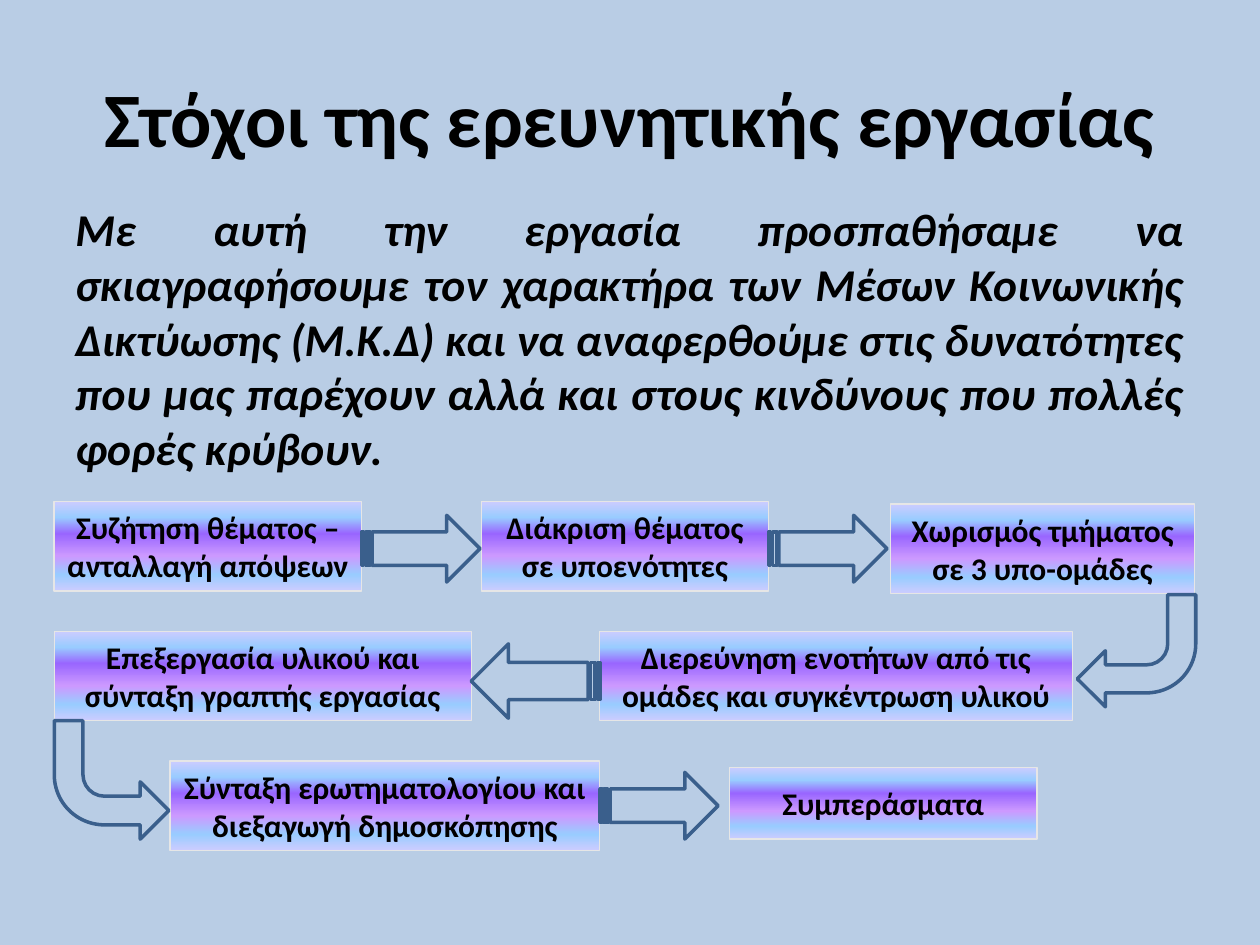
from lxml import etree
from pptx import Presentation
from pptx.dml.color import RGBColor
from pptx.enum.shapes import MSO_SHAPE
from pptx.enum.text import MSO_ANCHOR, PP_ALIGN
from pptx.oxml.ns import qn
from pptx.util import Inches, Pt

RECTANGLE = MSO_SHAPE.RECTANGLE
STRIPED = MSO_SHAPE.STRIPED_RIGHT_ARROW
BENT = MSO_SHAPE.BENT_ARROW
CENTER, JUSTIFY = PP_ALIGN.CENTER, PP_ALIGN.JUSTIFY
TOP, MIDDLE = MSO_ANCHOR.TOP, MSO_ANCHOR.MIDDLE

FONT = "Calibri"
COLORS = {"background": "B9CDE5", "text": "000000",
          "box_line": "E6E6E6", "arrow_line": "3A5F8C"}
# Gradient stops of the step boxes: percent, colour
GRADIENT = [(0, "CCCCFF"), (18, "99CCFF"), (36, "9966FF"),
            (61, "CC99FF"), (82, "99CCFF"), (100, "CCCCFF")]

TITLE = "Στόχοι της ερευνητικής εργασίας"
INTRO = ("Με αυτή την εργασία προσπαθήσαμε να σκιαγραφήσουμε τον χαρακτήρα "
         "των Μέσων Κοινωνικής Δικτύωσης (Μ.Κ.Δ) και να αναφερθούμε στις "
         "δυνατότητες που μας παρέχουν αλλά και στους κινδύνους που πολλές "
         "φορές κρύβουν.")
# Steps in order: text, (left, top, width, height)
STEPS = [
    ("Συζήτηση θέματος – ανταλλαγή απόψεων", (0.43, 3.98, 2.44, 0.71)),
    ("Διάκριση θέματος σε υποενότητες", (3.82, 3.98, 2.28, 0.71)),
    ("Χωρισμός τμήματος σε 3 υπο-ομάδες", (7.07, 4.0, 2.41, 0.71)),
    ("Διερεύνηση ενοτήτων από τις ομάδες και συγκέντρωση υλικού",
     (4.76, 5.01, 3.75, 0.71)),
    ("Επεξεργασία υλικού και σύνταξη γραπτής εργασίας",
     (0.43, 5.01, 3.31, 0.71)),
    ("Σύνταξη ερωτηματολογίου και διεξαγωγή δημοσκόπησης",
     (1.35, 6.04, 3.41, 0.71)),
    ("Συμπεράσματα", (5.79, 6.09, 2.44, 0.57)),
]
# Arrows between steps: kind, place, rotation, mirrored
ARROWS = [
    (STRIPED, (2.87, 4.09, 0.94, 0.53), 0, False),
    (STRIPED, (6.1, 4.09, 0.94, 0.53), 0, False),
    (BENT, (8.55, 4.72, 0.94, 0.89), 180, False),
    (STRIPED, (3.74, 5.11, 1.02, 0.59), 180, False),
    (BENT, (0.43, 5.72, 0.91, 0.94), 180, True),
    (STRIPED, (4.76, 6.13, 0.94, 0.53), 0, False),
]


def color(name):
    return RGBColor.from_string(COLORS[name])


def write(shape, text, size, align, anchor, italic=False):
    frame = shape.text_frame
    frame.word_wrap = True
    frame.vertical_anchor = anchor
    para = frame.paragraphs[0]
    para.alignment = align
    span = para.add_run()
    span.text = text
    font = span.font
    font.name, font.size = FONT, Pt(size)
    font.bold, font.italic = True, italic
    font.color.rgb = color("text")


def add_outlined(page, kind, place, line_color, line_width):
    shape = page.shapes.add_shape(kind, *map(Inches, place))
    shape.shadow.inherit = False
    shape.line.color.rgb = color(line_color)
    shape.line.width = Pt(line_width)
    return shape


def fill_gradient(shape):
    shape.fill.gradient()
    shape.fill.gradient_angle = 270
    stops = shape._element.spPr.find(qn("a:gradFill")).find(qn("a:gsLst"))
    for stop in list(stops):
        stops.remove(stop)
    for percent, value in GRADIENT:
        stop = etree.SubElement(stops, qn("a:gs"), pos=str(percent * 1000))
        etree.SubElement(stop, qn("a:srgbClr"), val=value)


def main():
    deck = Presentation()
    deck.slide_width, deck.slide_height = Inches(10), Inches(7.5)
    page = deck.slides.add_slide(deck.slide_layouts[5])
    page.background.fill.solid()
    page.background.fill.fore_color.rgb = color("background")

    # Title and introduction
    title = page.shapes.title
    title.left, title.top = Inches(0.5), Inches(0.3)
    title.width, title.height = Inches(9), Inches(1.25)
    write(title, TITLE, 44, CENTER, MIDDLE)
    intro = page.shapes.add_textbox(*map(Inches, (0.5, 1.55, 9, 1.92)))
    write(intro, INTRO, 26, JUSTIFY, TOP, italic=True)

    # Step boxes
    for text, place in STEPS:
        box = add_outlined(page, RECTANGLE, place, "box_line", 0.75)
        fill_gradient(box)
        write(box, text, 18, CENTER, MIDDLE)

    # Arrows
    for kind, place, rotation, mirrored in ARROWS:
        arrow = add_outlined(page, kind, place, "arrow_line", 2)
        arrow.fill.background()
        arrow.rotation = rotation
        if mirrored:
            arrow._element.spPr.find(qn("a:xfrm")).set("flipH", "1")

    deck.save("out.pptx")


if __name__ == "__main__":
    main()
